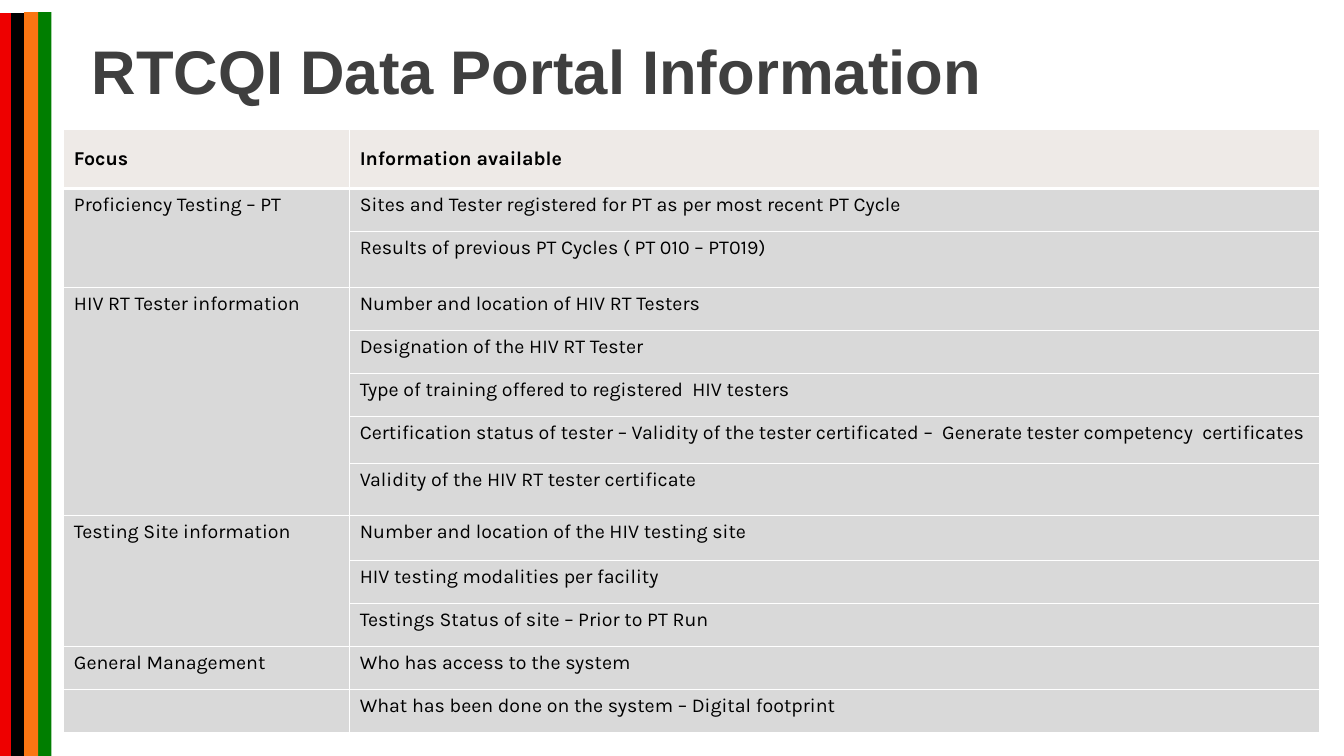
from pptx import Presentation
from pptx.dml.color import RGBColor
from pptx.enum.shapes import MSO_SHAPE
from pptx.enum.text import MSO_ANCHOR, PP_ALIGN
from pptx.oxml import parse_xml
from pptx.oxml.ns import nsdecls
from pptx.util import Pt

TITLE = "RTCQI Data Portal Information"
HEADINGS = ("Focus", "Information available")
# Each focus area: its label, then (information, row height)
FOCUS_AREAS = [
    ("Proficiency Testing – PT", [
        ("Sites and Tester registered for PT as per most recent PT Cycle", 30.7),
        ("Results of previous PT Cycles ( PT 010 – PT019)", 40.3),
    ]),
    ("HIV RT Tester information", [
        ("Number and location of HIV RT Testers", 30.7),
        ("Designation of the HIV RT Tester", 30.7),
        ("Type of training offered to registered  HIV testers", 30.7),
        ("Certification status of tester – Validity of the tester certificated –  "
         "Generate tester competency  certificates", 33.6),
        ("Validity of the HIV RT tester certificate", 37),
    ]),
    ("Testing Site information", [
        ("Number and location of the HIV testing site", 32.2),
        ("HIV testing modalities per facility", 30.7),
        ("Testings Status of site – Prior to PT Run", 30.7),
    ]),
    ("General Management", [("Who has access to the system", 30.7)]),
    ("", [("What has been done on the system – Digital footprint", 30.7)]),
]
# Flag stripes, back to front: colour, left, top, width
STRIPES = [
    ("007E00", 25.2, 8.6, 11.5),
    ("EE0000", 0, 9.4, 17.3),
    ("000000", 7.9, 9.4, 10),
    ("FA7512", 17.3, 8.6, 10),
]
SLIDE_W, SLIDE_H = 960, 540
TABLE_LEFT, TABLE_TOP = 45.6, 92.2
COLUMN_WIDTHS = (204.2, 692.6)
HEADER_HEIGHT = 42.4


def rgb(value):
    return RGBColor.from_string(value)


def set_borders(cell, top=1, bottom=1):
    properties = cell._tc.get_or_add_tcPr()
    for side, width in (("L", 1), ("R", 1), ("T", top), ("B", bottom)):
        properties.append(parse_xml(
            f'<a:ln{side} {nsdecls("a")} w="{Pt(width)}"><a:solidFill>'
            f'<a:srgbClr val="FFFFFF"/></a:solidFill></a:ln{side}>'))


def style_cell(cell, row):
    header = row == 0
    set_borders(cell, top=3 if row == 1 else 1, bottom=3 if header else 1)
    cell.fill.solid()
    cell.fill.fore_color.rgb = rgb("EEEAE7" if header else "D9D9D9")
    cell.vertical_anchor = MSO_ANCHOR.MIDDLE if header else MSO_ANCHOR.TOP
    font = cell.text_frame.paragraphs[0].font
    font.name, font.size, font.bold = "Karla", Pt(14), header
    font.color.rgb = rgb("000000")


def add_stripes(slide):
    for color, left, top, width in STRIPES:
        stripe = slide.shapes.add_shape(
            MSO_SHAPE.RECTANGLE, Pt(left), Pt(top), Pt(width), Pt(SLIDE_H - top))
        stripe.shadow.inherit = False
        stripe.fill.solid()
        stripe.fill.fore_color.rgb = rgb(color)
        stripe.line.fill.background()


def add_title(slide):
    title = slide.shapes.title
    title.left, title.top, title.width, title.height = Pt(58.3), Pt(15), Pt(828), Pt(77)
    title.text_frame.text = TITLE
    title.text_frame.vertical_anchor = MSO_ANCHOR.MIDDLE
    paragraph = title.text_frame.paragraphs[0]
    paragraph.alignment = PP_ALIGN.LEFT
    paragraph.line_spacing = 0.9
    font = paragraph.runs[0].font
    font.name, font.size, font.bold = "Arial", Pt(44), True
    font.color.rgb = rgb("3F3F3F")


def add_portal_table(slide):
    heights = [HEADER_HEIGHT] + [h for _, items in FOCUS_AREAS for _, h in items]
    table = slide.shapes.add_table(
        len(heights), len(COLUMN_WIDTHS), Pt(TABLE_LEFT), Pt(TABLE_TOP),
        Pt(sum(COLUMN_WIDTHS)), Pt(sum(heights))).table
    for column, width in zip(table.columns, COLUMN_WIDTHS):
        column.width = Pt(width)
    for row, height in zip(table.rows, heights):
        row.height = Pt(height)

    for column, heading in enumerate(HEADINGS):
        table.cell(0, column).text_frame.text = heading
    first = 1
    for focus, items in FOCUS_AREAS:
        last = first + len(items) - 1
        table.cell(first, 0).text_frame.text = focus
        for row, (information, _) in enumerate(items, first):
            table.cell(row, 1).text_frame.text = information
        if last > first:
            table.cell(first, 0).merge(table.cell(last, 0))
        first = last + 1

    for row in range(len(heights)):
        for column in range(len(COLUMN_WIDTHS)):
            style_cell(table.cell(row, column), row)


def main():
    deck = Presentation()
    deck.slide_width, deck.slide_height = Pt(SLIDE_W), Pt(SLIDE_H)
    slide = deck.slides.add_slide(deck.slide_layouts[5])
    add_stripes(slide)
    add_title(slide)
    add_portal_table(slide)
    deck.save("out.pptx")


if __name__ == "__main__":
    main()
